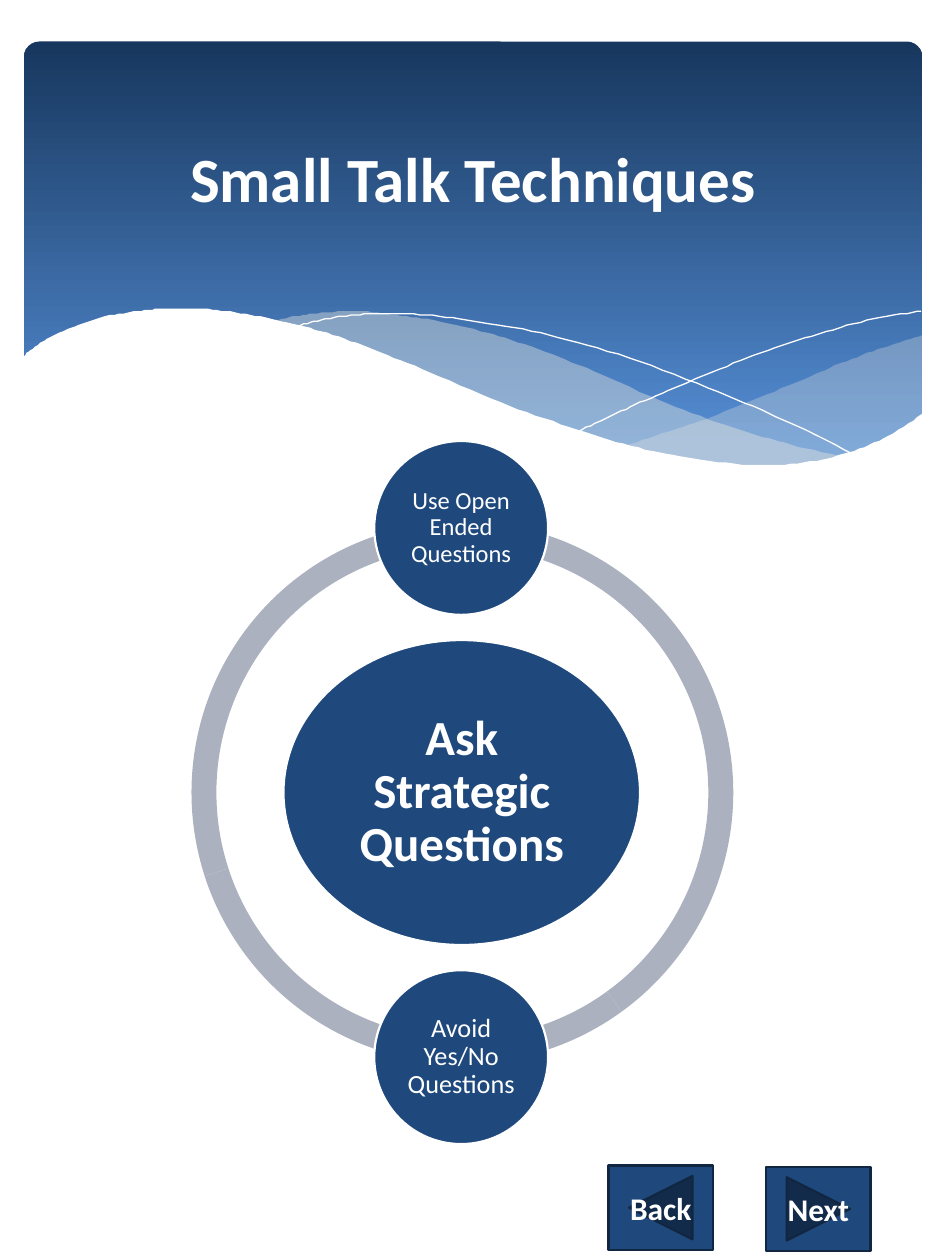
"""Build the Small Talk Techniques slide."""
from dataclasses import dataclass
from typing import Optional

from lxml.etree import SubElement
from pptx import Presentation
from pptx.dml.color import RGBColor
from pptx.enum.shapes import MSO_SHAPE
from pptx.enum.text import MSO_ANCHOR, PP_ALIGN
from pptx.oxml.ns import qn
from pptx.util import Pt

PX = 9144
WHITE, NAVY, CREAM = "FFFFFF", "1F497D", "EEECE1"
SPLINE_STEPS = 8
Point = tuple[float, float]


@dataclass
class Node:
    text: str
    left: int
    top: int
    width: int
    height: int
    size: int
    bold: bool = False
    inset: int = 2
    line: str = WHITE
    kind: MSO_SHAPE = MSO_SHAPE.OVAL
    spacing: float = 0.9


@dataclass
class Wave:
    curves: list[list[Point]]
    fill: Optional[str] = None
    opacity: int = 100


NODES = [
    Node("Ask Strategic Questions", 225, 508, 283, 242, 28, True, 4),
    Node("Use Open Ended Questions", 297, 350, 138, 138, 14),
    Node("Avoid Yes/No Questions", 297, 770, 138, 138, 15),
    Node("Back", 483, 925, 83, 67, 18, True, 10, "102641",
         MSO_SHAPE.ACTION_BUTTON_BACK_OR_PREVIOUS, 1.0),
    Node("Next", 608, 926, 83, 67, 18, True, 10, "102641",
         MSO_SHAPE.ACTION_BUTTON_FORWARD_OR_NEXT, 1.0),
]

WAVES = [
    Wave([[(732, 266), (701, 276), (668, 288), (645, 298), (604, 315),
           (565, 331), (529, 343), (496, 354)],
          [(496, 354), (529, 361), (568, 368), (610, 370), (647, 367),
           (679, 358), (707, 346), (732, 329)]], CREAM, 29),
    Wave([[(670, 363), (628, 353), (581, 339), (529, 320), (472, 295),
           (427, 277), (386, 264), (348, 255), (315, 250), (285, 247),
           (258, 248), (235, 251), (215, 255)],
          [(215, 255), (257, 266), (303, 281), (337, 295), (397, 321),
           (451, 340), (499, 355), (542, 365), (580, 370), (613, 371),
           (643, 369), (670, 363)]], CREAM, 40),
    Wave([[(232, 261), (246, 256), (272, 251), (301, 249), (338, 250),
           (382, 256), (436, 266), (499, 284), (570, 311), (623, 334),
           (681, 362)]]),
    Wave([[(460, 342), (489, 328), (521, 314), (561, 297), (604, 280),
           (650, 265), (693, 253), (731, 247)]]),
    Wave([[(733, 328), (705, 346), (674, 359), (638, 367), (595, 369),
           (545, 363), (501, 354), (452, 339), (397, 319), (335, 293),
           (293, 276), (255, 263), (219, 254), (187, 248), (158, 245),
           (132, 245), (109, 247), (80, 252), (57, 260), (39, 268),
           (27, 276), (17, 284)],
          [(17, 439), (733, 439)]], WHITE),
]


def rgb(color: str) -> RGBColor:
    """Turn a hex string into a colour."""
    return RGBColor.from_string(color)


def spline(knots: list[Point]) -> list[Point]:
    """Sample a smooth curve that passes through every knot."""
    if len(knots) < 3:
        return knots
    padded = [knots[0], *knots, knots[-1]]
    samples = [knots[0]]
    for a, b, c, d in zip(padded, padded[1:], padded[2:], padded[3:]):
        for step in range(1, SPLINE_STEPS + 1):
            t = step / SPLINE_STEPS
            samples.append(tuple(
                q + t * (r - p) / 2 + t**2 * (2 * p - 5 * q + 4 * r - s) / 2
                + t**3 * (3 * q - p - 3 * r + s) / 2
                for p, q, r, s in zip(a, b, c, d)))
    return samples


def add_preset(slide, kind: MSO_SHAPE, *box: int):
    """Add a preset shape without shadow, placed in px."""
    shape = slide.shapes.add_shape(kind, *(PX * length for length in box))
    shape.shadow.inherit = False
    return shape


def paint(shape, fill: str, line: Optional[str] = None) -> None:
    """Give a shape a solid fill and an optional outline."""
    shape.fill.solid()
    shape.fill.fore_color.rgb = rgb(fill)
    if line:
        shape.line.color.rgb = rgb(line)
        shape.line.width = Pt(1.25)
    else:
        shape.line.fill.background()


def write(shape, text: str, size: int, bold: bool) -> None:
    """Set centred white text in a shape."""
    frame = shape.text_frame
    frame.word_wrap = True
    frame.vertical_anchor = MSO_ANCHOR.MIDDLE
    frame.text = text
    paragraph = frame.paragraphs[0]
    paragraph.alignment = PP_ALIGN.CENTER
    font = paragraph.runs[0].font
    font.name, font.size, font.bold = "Calibri", Pt(size), bold
    font.color.rgb = rgb(WHITE)


def draw_wave(slide, wave: Wave) -> None:
    """Draw a filled wave or a thin wave line."""
    points = [point for curve in wave.curves for point in spline(curve)]
    builder = slide.shapes.build_freeform(*points[0], scale=PX)
    builder.add_line_segments(points[1:], close=wave.fill is not None)
    shape = builder.convert_to_shape()
    shape.shadow.inherit = False
    if wave.fill is None:
        shape.fill.background()
        shape.line.color.rgb = rgb(WHITE)
        shape.line.width = Pt(0)
        return
    paint(shape, wave.fill)
    if wave.opacity < 100:
        color = shape.fill._xPr.find(qn("a:solidFill"))[0]
        SubElement(color, qn("a:alpha"), val=str(wave.opacity * 1000))


def draw_banner(slide) -> None:
    """Draw the gradient banner, its waves and the title."""
    banner = add_preset(slide, MSO_SHAPE.ROUNDED_RECTANGLE, 19, 33, 713, 360)
    banner.adjustments[0] = 0.034
    banner.line.fill.background()
    banner.fill.gradient()
    banner.fill.gradient_angle = 270
    stops = ((0, "17375E"), (0.9, "558ED5"))
    for stop, (position, color) in zip(banner.fill.gradient_stops, stops):
        stop.position = position
        stop.color.rgb = rgb(color)
    for wave in WAVES:
        draw_wave(slide, wave)
    title = slide.shapes.add_textbox(38 * PX, 49 * PX, 675 * PX, 183 * PX)
    write(title, "Small Talk Techniques", 36, True)


def draw_arc(slide, start: int, end: int) -> None:
    """Draw one part of the ring between two angles in degrees."""
    arc = add_preset(slide, MSO_SHAPE.BLOCK_ARC, 152, 414, 430, 430)
    for index, value in enumerate((start * 0.6, end * 0.6, 0.046)):
        arc.adjustments[index] = value
    paint(arc, "ACB1BF")


def draw_node(slide, node: Node) -> None:
    """Draw a labelled circle or button."""
    shape = add_preset(slide, node.kind, node.left, node.top,
                       node.width, node.height)
    paint(shape, NAVY, node.line)
    write(shape, node.text, node.size, node.bold)
    frame = shape.text_frame
    frame.margin_left = frame.margin_right = node.inset * PX
    frame.margin_top = frame.margin_bottom = min(node.inset, 5) * PX
    frame.paragraphs[0].line_spacing = node.spacing


def main() -> None:
    """Build and save the slide."""
    deck = Presentation()
    deck.slide_width, deck.slide_height = 750 * PX, 1000 * PX
    slide = deck.slides.add_slide(deck.slide_layouts[6])
    draw_banner(slide)
    draw_arc(slide, 54, 162)
    draw_arc(slide, 162, 54)
    for node in NODES:
        draw_node(slide, node)
    deck.save("out.pptx")


if __name__ == "__main__":
    main()
